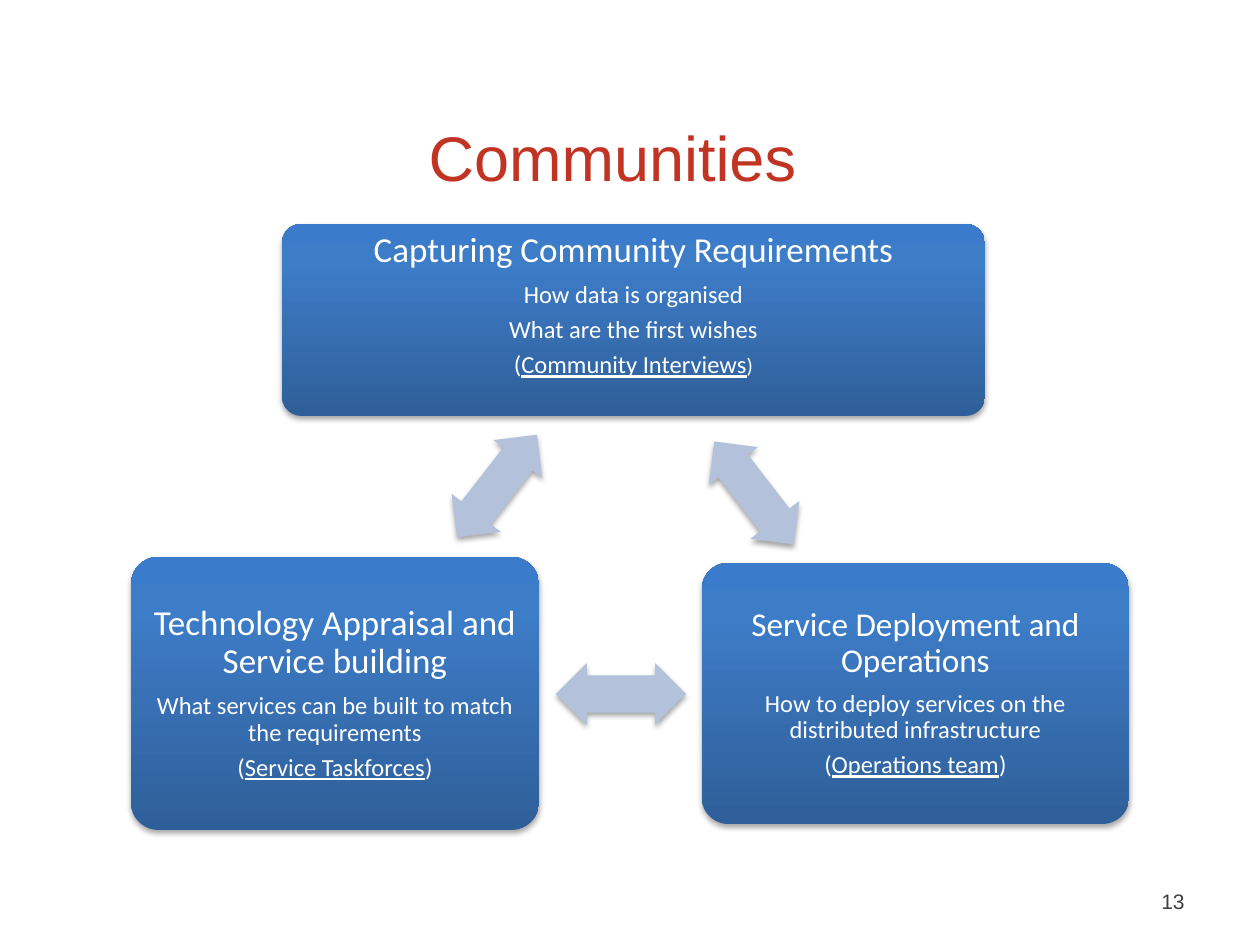
from dataclasses import dataclass
from lxml.etree import SubElement
from pptx import Presentation
from pptx.dml.color import RGBColor as RGB
from pptx.enum.shapes import MSO_SHAPE as Kind
from pptx.enum.text import MSO_ANCHOR as Anchor, PP_ALIGN as Align
from pptx.oxml import parse_xml
from pptx.oxml.ns import nsdecls, qn
from pptx.util import Emu, Pt


@dataclass(frozen=True)
class Theme:
    """Colours, fonts and type sizes."""
    title: str = "C13424"
    number: str = "404040"
    text: str = "FFFFFF"
    arrow: str = "B3C1DB"
    shades: tuple = ((0, "2F5F99"), (80, "3D7CC7"), (100, "3A7CCB"))
    plain: str = "Arial"
    card: str = "Calibri"
    title_size: int = 36
    number_size: int = 12
    body_size: int = 14


LOOK = Theme()


def px(n):
    """Turn pixels into EMU."""
    return Emu(round(n * 914400 / 126))


def style(para, face, size, color, align):
    """Set the font and alignment of a paragraph."""
    para.alignment = align
    font = para.font
    font.name, font.size = face, Pt(size)
    font.color.rgb = RGB.from_string(color)


def label(slide, box, text, size, color, align, shift=0):
    """Place one line of plain text, moved left by widening its right inset."""
    frame = slide.shapes.add_textbox(*map(px, box)).text_frame
    frame.word_wrap = True
    frame.vertical_anchor = Anchor.MIDDLE
    frame.margin_right += px(shift)
    para = frame.paragraphs[0]
    para.text = text
    style(para, LOOK.plain, size, color, align)


def block(slide, kind, box):
    """Add a borderless shape with a soft shadow below it."""
    shape = slide.shapes.add_shape(kind, *map(px, box))
    shape.line.fill.background()
    shape.shadow.inherit = False
    effects = shape._element.spPr.find(qn("a:effectLst"))
    effects.append(parse_xml(
        f'<a:outerShdw {nsdecls("a")} blurRad="40000" dist="23000" dir="5400000" '
        'rotWithShape="0"><a:srgbClr val="000000"><a:alpha val="35000"/>'
        '</a:srgbClr></a:outerShdw>'))
    return shape


def shade(shape):
    """Fill a shape with the vertical blue gradient."""
    shape.fill.gradient()
    shape.fill.gradient_angle = 90
    stops = shape._element.spPr.find(qn("a:gradFill")).find(qn("a:gsLst"))
    for stop in list(stops):
        stops.remove(stop)
    for place, color in LOOK.shades:
        stop = SubElement(stops, qn("a:gs"), pos=str(place * 1000))
        SubElement(stop, qn("a:srgbClr"), val=color)


def card(slide, box, head, lines, team, size, insets=(10, 10), tail=None):
    """Place a card with a heading, body lines and an underlined team name."""
    shape = block(slide, Kind.ROUNDED_RECTANGLE, box)
    shape.adjustments[0] = 0.1
    shade(shape)
    frame = shape.text_frame
    frame.word_wrap = True
    frame.vertical_anchor = Anchor.MIDDLE
    frame.margin_left = frame.margin_right = px(10)
    frame.margin_top, frame.margin_bottom = map(px, insets)
    rows = [(head,), *((line,) for line in lines), ("(", team, ")")]
    for i, parts in enumerate(rows):
        para = frame.add_paragraph() if i else frame.paragraphs[0]
        points = LOOK.body_size if i else size
        para.line_spacing = 0.9
        para.space_after = Pt(points * 0.35)
        style(para, LOOK.card, points, LOOK.text, Align.CENTER)
        for part in parts:
            run = para.add_run()
            run.text = part
            if part == team:
                run.font.underline = True
    if tail:
        run.font.size = Pt(tail)


def arrow(slide, left, top, turn):
    """Place a turned double arrow."""
    shape = block(slide, Kind.LEFT_RIGHT_ARROW, (left, top, 130, 62))
    shape.adjustments[0] = 0.6
    shape.adjustments[1] = 0.5
    shape.rotation = turn
    shape.fill.solid()
    shape.fill.fore_color.rgb = RGB.from_string(LOOK.arrow)


def main():
    """Build and save the slide."""
    deck = Presentation()
    deck.slide_width, deck.slide_height = px(1260), px(945)
    slide = deck.slides.add_slide(deck.slide_layouts[6])
    label(slide, (63, 106, 1134, 100), "Communities", LOOK.title_size,
          LOOK.title, Align.CENTER, shift=35)
    label(slide, (903, 876, 294, 50), "13", LOOK.number_size,
          LOOK.number, Align.RIGHT)
    card(slide, (282, 224, 703, 192), "Capturing Community Requirements",
         ("How data is organised", "What are the first wishes"),
         "Community Interviews", 20, insets=(0, 28), tail=12)
    arrow(slide, 689, 462, 52.3)
    card(slide, (702, 563, 427, 261), "Service Deployment and Operations",
         ("How to deploy services on the distributed infrastructure",),
         "Operations team", 19)
    arrow(slide, 556, 663, 180)
    card(slide, (131, 557, 408, 273), "Technology Appraisal and Service building",
         ("What services can be built to match the requirements",),
         "Service Taskforces", 20)
    arrow(slide, 432, 455, 307.9)
    deck.save("out.pptx")


if __name__ == "__main__":
    main()
